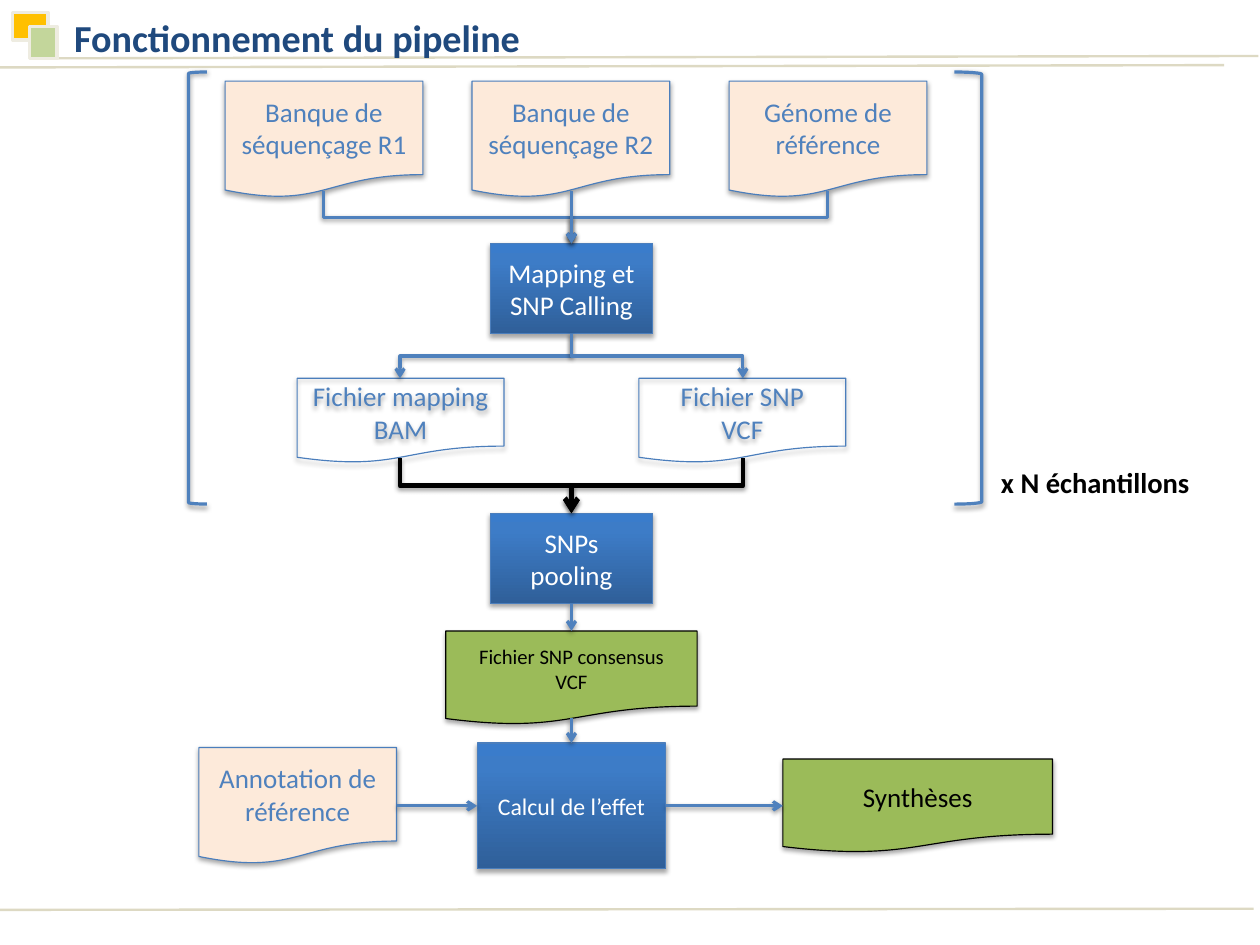
from copy import deepcopy
from dataclasses import dataclass
from typing import Optional

from lxml.etree import SubElement
from pptx import Presentation
from pptx.dml.color import RGBColor
from pptx.enum.shapes import MSO_CONNECTOR, MSO_SHAPE
from pptx.enum.text import MSO_ANCHOR, MSO_AUTO_SIZE, PP_ALIGN
from pptx.oxml.ns import qn
from pptx.shapes.autoshape import Shape
from pptx.shapes.connector import Connector
from pptx.slide import Slide
from pptx.text.text import TextFrame
from pptx.util import Emu, Inches, Pt

BLUE = "4F81BD"
OUTLINE = "4B7EBC"
BLACK = "000000"
WHITE = "FFFFFF"
PEACH = "FDEADA"
GREEN = "9BBB59"
BEIGE = "DDD9C3"
IVORY = "EEECE1"
PROCESS_GRADIENT = ((0, "2F5F99"), (0.8, "3D7CC7"), (1, "3A7CCB"))
TOP, LEFT, BOTTOM, RIGHT = range(4)
AXIS = 5


@dataclass(frozen=True)
class Document:
    text: str
    left: float
    top: float
    width: float = 1.73
    height: float = 1.02
    fill: Optional[str] = PEACH
    outline: str = OUTLINE
    color: str = BLUE
    size: float = 17


@dataclass(frozen=True)
class Process:
    text: str
    top: float
    width: float = 1.42
    height: float = 0.79
    size: float = 17


@dataclass(frozen=True)
class Elbow:
    start_x: float
    start_y: float
    end_x: float
    end_y: float
    color: str = BLUE
    width: float = 2


@dataclass(frozen=True)
class Arrow:
    start: tuple[float, float]
    end: tuple[float, float]
    source: Optional[tuple[str, int]]
    target: tuple[str, int]


DOCUMENTS = {
    "first_reads": Document("Banque de séquençage R1", 1.97, 0.71),
    "second_reads": Document("Banque de séquençage R2", 4.13, 0.71),
    "genome": Document("Génome de référence", 6.38, 0.71),
    "mapping_file": Document("Fichier mapping\nBAM", 2.6, 3.31, 1.81, 0.74, None),
    "snp_file": Document("Fichier SNP\nVCF", 5.59, 3.31, 1.81, 0.74, None),
    "consensus": Document("Fichier SNP consensus\nVCF", 3.9, 5.52, 2.2, 0.82,
                          GREEN, BLACK, BLACK, 13),
    "summary": Document("Synthèses", 6.85, 6.64, 2.36, 0.82, GREEN, BLACK, BLACK),
    "annotation": Document("Annotation de référence", 1.74, 6.54),
}
PROCESSES = {
    "mapping": Process("Mapping et SNP Calling", 2.13),
    "pooling": Process("SNPs pooling", 4.49),
    "effect": Process("Calcul de l’effet", 6.5, 1.65, 1.1, 15),
}
ELBOWS = (
    Elbow(2.83, 1.67, AXIS, 2.13),
    Elbow(7.24, 1.67, AXIS, 2.13),
    Elbow(AXIS, 2.92, 3.5, 3.31),
    Elbow(AXIS, 2.92, 6.5, 3.31),
    Elbow(3.5, 4.01, AXIS, 4.49, BLACK, 3),
    Elbow(6.5, 4.01, AXIS, 4.49, BLACK, 3),
)
ARROWS = (
    Arrow((AXIS, 1.67), (AXIS, 2.13), None, ("mapping", TOP)),
    Arrow((AXIS, 5.28), (AXIS, 5.52), ("pooling", BOTTOM), ("consensus", TOP)),
    Arrow((AXIS, 6.28), (AXIS, 6.5), None, ("effect", TOP)),
    Arrow((5.83, 7.05), (6.85, 7.05), ("effect", RIGHT), ("summary", LEFT)),
    Arrow((3.48, 7.06), (4.17, 7.05), ("annotation", RIGHT), ("effect", LEFT)),
)
RULES = ((0.5, 0.51, 11.01, 0.49), (-0.01, 0.59, 10.71, 0.57), (-0.01, 7.96, 10.97, 7.95))
SQUARES = ((0.11, 0.11, 0.31, 0.24, "FFC000"), (0.26, 0.23, 0.24, 0.28, "C3D69B"))
BRACKETS = ((1.65, 0.16, 0), (8.35, 0.24, 180))


def rgb(value: str) -> RGBColor:
    return RGBColor.from_string(value)


def add_shadow(effects, alpha: int, distance: float) -> None:
    shadow = SubElement(effects, qn("a:outerShdw"), blurRad=str(Pt(3.1)),
                        dist=str(Pt(distance)), dir="5400000", rotWithShape="0")
    color = SubElement(shadow, qn("a:srgbClr"), val=BLACK)
    SubElement(color, qn("a:alpha"), val=str(alpha * 1000))


def write(frame: TextFrame, text: str, size: float, color: str,
          bold: bool = False, align: PP_ALIGN = PP_ALIGN.LEFT) -> None:
    frame.text = text
    for para in frame.paragraphs:
        para.alignment = align
        for span in para.runs:
            span.font.name = "Calibri"
            span.font.size = Pt(size)
            span.font.bold = bold
            span.font.color.rgb = rgb(color)


def add_box(page: Slide, kind: MSO_SHAPE, left: float, top: float, width: float,
            height: float, fill: Optional[str], outline: str, weight: float) -> Shape:
    box = page.shapes.add_shape(kind, Inches(left), Inches(top), Inches(width), Inches(height))
    box.shadow.inherit = False
    if fill:
        box.fill.solid()
        box.fill.fore_color.rgb = rgb(fill)
    else:
        box.fill.background()
    box.line.color.rgb = rgb(outline)
    box.line.width = Pt(weight)
    return box


def shade_box(box: Shape, alpha: int, distance: float) -> None:
    add_shadow(box._element.spPr.find(qn("a:effectLst")), alpha, distance)


def label_box(box: Shape, text: str, size: float, color: str) -> None:
    shade_box(box, 35, 1.8)
    box.text_frame.word_wrap = True
    box.text_frame.vertical_anchor = MSO_ANCHOR.MIDDLE
    write(box.text_frame, text, size, color, align=PP_ALIGN.CENTER)


def add_document(page: Slide, item: Document) -> Shape:
    box = add_box(page, MSO_SHAPE.FLOWCHART_DOCUMENT, item.left, item.top,
                  item.width, item.height, item.fill, item.outline, 0.75)
    label_box(box, item.text, item.size, item.color)
    return box


def add_process(page: Slide, item: Process) -> Shape:
    box = add_box(page, MSO_SHAPE.FLOWCHART_PROCESS, AXIS - item.width / 2, item.top,
                  item.width, item.height, None, OUTLINE, 0.75)
    box.fill.gradient()
    box.fill.gradient_angle = 90
    stops = box._element.spPr.find(qn("a:gradFill")).find(qn("a:gsLst"))
    stops.append(deepcopy(stops[0]))
    for stop, (position, color) in zip(box.fill.gradient_stops, PROCESS_GRADIENT):
        stop.position = position
        stop.color.rgb = rgb(color)
    label_box(box, item.text, item.size, WHITE)
    return box


def add_line(page: Slide, kind: MSO_CONNECTOR, ends: tuple[float, float, float, float],
             color: str, width: float, arrow: bool = True) -> Connector:
    line = page.shapes.add_connector(kind, *(Inches(value) for value in ends))
    line.line.color.rgb = rgb(color)
    line.line.width = Pt(width)
    effects = SubElement(line._element.spPr, qn("a:effectLst"))
    if arrow:
        SubElement(line.line._get_or_add_ln(), qn("a:tailEnd"), type="arrow")
        add_shadow(effects, 38, 1.6)
    return line


def add_elbow(page: Slide, item: Elbow) -> None:
    drop = item.end_y - item.start_y
    span = abs(item.end_x - item.start_x)
    left = (item.start_x + item.end_x - drop) / 2
    top = (item.start_y + item.end_y - span) / 2
    rightward = item.end_x > item.start_x
    sides = (left + drop, left) if rightward else (left, left + drop)
    line = add_line(page, MSO_CONNECTOR.ELBOW, (sides[0], top, sides[1], top + span),
                    item.color, item.width)
    line._element.spPr.find(qn("a:xfrm")).set("rot", "16200000" if rightward else "5400000")


def add_arrow(page: Slide, item: Arrow, boxes: dict[str, Shape]) -> None:
    line = add_line(page, MSO_CONNECTOR.STRAIGHT, item.start + item.end, BLUE, 2)
    if item.source:
        line.begin_connect(boxes[item.source[0]], item.source[1])
    line.end_connect(boxes[item.target[0]], item.target[1])


def add_text(page: Slide, left: float, top: float, width: float, height: float) -> TextFrame:
    box = page.shapes.add_textbox(Inches(left), Inches(top), Inches(width), Inches(height))
    return box.text_frame


def main() -> None:
    deck = Presentation()
    deck.slide_width = Emu(10080625)
    deck.slide_height = Emu(7559675)
    page = deck.slides.add_slide(deck.slide_layouts[6])
    for ends in RULES:
        add_line(page, MSO_CONNECTOR.STRAIGHT, ends, BEIGE, 1.5, arrow=False)
    for left, top, width, height, fill in SQUARES:
        add_box(page, MSO_SHAPE.RECTANGLE, left, top, width, height, fill, IVORY, 2)
    boxes = {name: add_document(page, item) for name, item in DOCUMENTS.items()}
    boxes |= {name: add_process(page, item) for name, item in PROCESSES.items()}
    for left, width, turn in BRACKETS:
        bracket = add_box(page, MSO_SHAPE.LEFT_BRACKET, left, 0.63, width, 3.78, None, BLUE, 2)
        bracket.rotation = turn
        shade_box(bracket, 38, 1.6)
    for elbow in ELBOWS:
        add_elbow(page, elbow)
    for arrow in ARROWS:
        add_arrow(page, arrow, boxes)
    samples = add_text(page, 8.66, 4.02, 2.05, 0.4)
    samples.word_wrap = False
    samples.auto_size = MSO_AUTO_SIZE.SHAPE_TO_FIT_TEXT
    write(samples, "x N échantillons", 18, BLACK, bold=True)
    title = add_text(page, 0.55, 0.12, 9.92, 0.41)
    title.word_wrap = True
    title.vertical_anchor = MSO_ANCHOR.MIDDLE
    write(title, "Fonctionnement du pipeline", 24, "1F497D", bold=True)
    deck.save("out.pptx")


if __name__ == "__main__":
    main()
